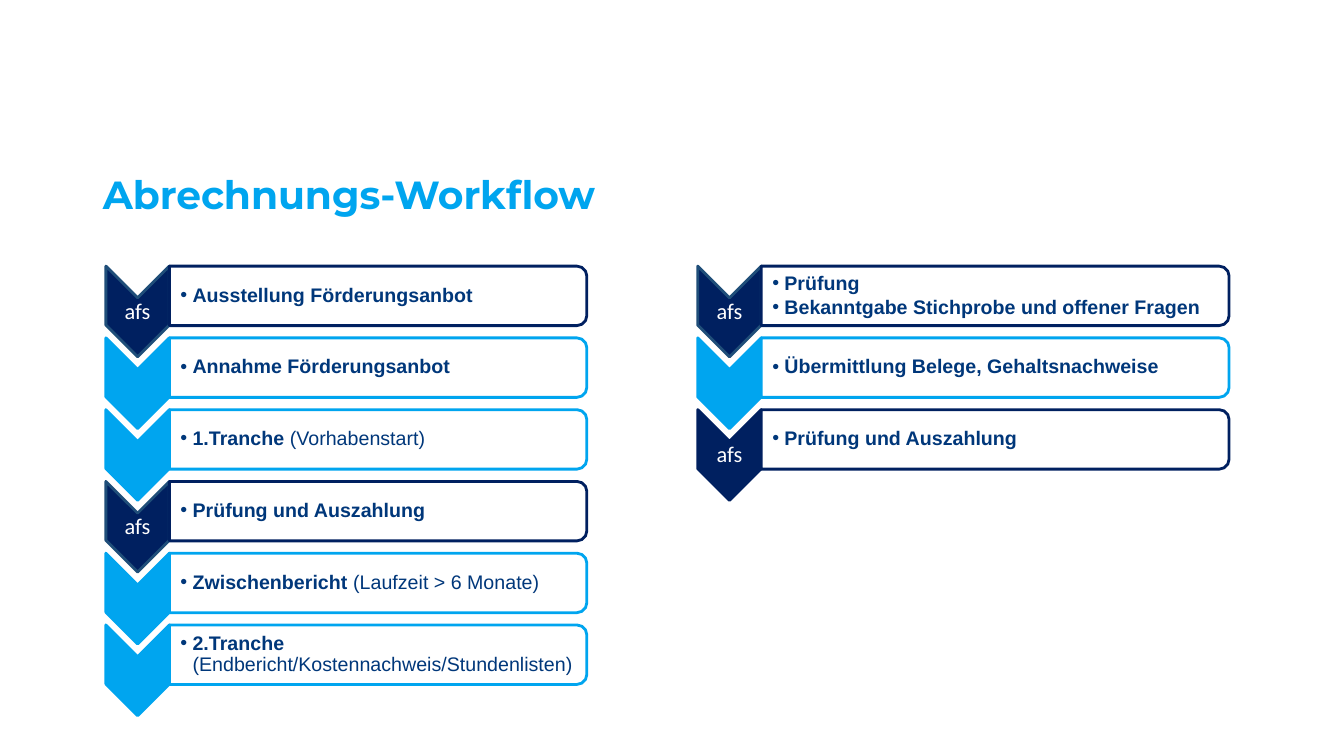
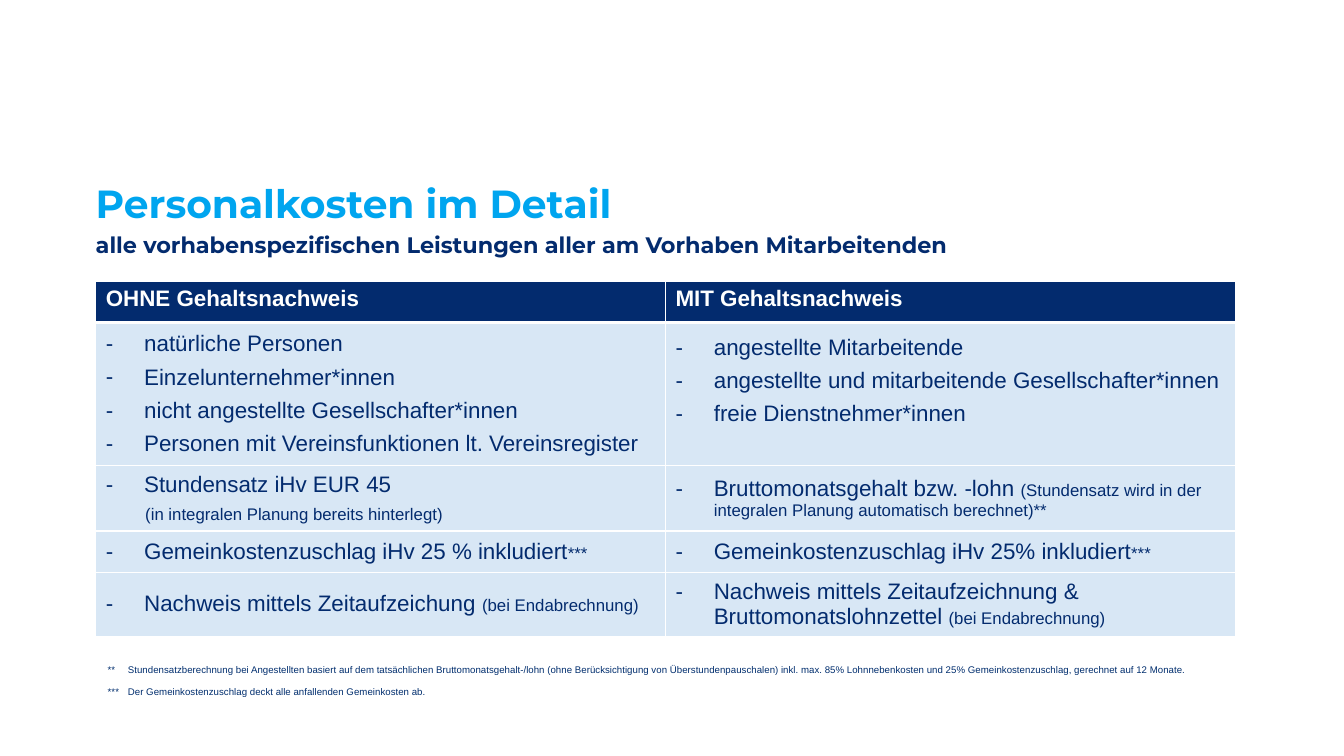
"""Build two slides on grant billing: the workflow and the staff cost details."""
import lxml.etree
import pptx
import pptx.dml.color
import pptx.enum.shapes
import pptx.enum.text
import pptx.oxml.ns
import pptx.util

Inches = pptx.util.Inches
Pt = pptx.util.Pt
RGB = pptx.dml.color.RGBColor.from_string
qn = pptx.oxml.ns.qn
SHAPE = pptx.enum.shapes.MSO_SHAPE
ANCHOR = pptx.enum.text.MSO_ANCHOR
CENTER = pptx.enum.text.PP_ALIGN.CENTER

COLORS = {
    "sky": "00A5EF",
    "midnight": "002060",
    "edge": "1F4E79",
    "step": "00377A",
    "navy": "032B6E",
    "footnote": "002E6E",
    "pale": "D8E7F5",
    "white": "FFFFFF",
}


def add_text_frame(slide, left, top, width, height, margins, anchor=ANCHOR.TOP):
    """Add a wrapping text box and return its text frame."""
    box = slide.shapes.add_textbox(Inches(left), Inches(top), Inches(width), Inches(height))
    frame = box.text_frame
    frame.word_wrap = True
    frame.vertical_anchor = anchor
    frame.margin_left, frame.margin_top, frame.margin_right, frame.margin_bottom = map(Inches, margins)
    return frame


def write(paragraph, runs, color, font="Arial", bullet=None, left=0, first=0):
    """Fill a paragraph with (text, size, bold) runs and set its indent and bullet."""
    properties = paragraph._p.get_or_add_pPr()
    if left:
        properties.set("marL", str(Inches(left)))
        properties.set("indent", str(Inches(first)))
    if bullet:
        lxml.etree.SubElement(properties, qn("a:buFont")).set("typeface", "Arial")
        lxml.etree.SubElement(properties, qn("a:buChar")).set("char", bullet)
    for text, size, bold in runs:
        if text:
            run = paragraph.add_run()
            run.text = text
            run.font.name = font
            run.font.size = Pt(size)
            run.font.bold = bold
            run.font.color.rgb = RGB(COLORS[color])


presentation = pptx.Presentation()
presentation.slide_width = Inches(13.33)
presentation.slide_height = Inches(7.5)
blank = presentation.slide_layouts[6]

titles = [
    (1.02, 1.06, ANCHOR.BOTTOM, "Abrechnungs-Workflow", ""),
    (0.95, 1.78, ANCHOR.TOP, "Personalkosten im Detail",
     "alle vorhabenspezifischen Leistungen aller am Vorhaben Mitarbeitenden"),
]
slides = []
for left, top, anchor, title, subtitle in titles:
    slide = presentation.slides.add_slide(blank)
    slides.append(slide)
    frame = add_text_frame(slide, left, top, 11.54, 1.1, (0, 0, 0, 0), anchor)
    write(frame.paragraphs[0], [(title, 28, True)], "sky", "Montserrat")
    if subtitle:
        paragraph = frame.add_paragraph()
        paragraph.space_before = Pt(3.2)
        write(paragraph, [(subtitle, 16, True)], "navy", "Montserrat")
workflow, costs = slides

AGENCY = ("midnight", "edge", "afs")
APPLICANT = ("sky", "sky", "")
columns = [
    (1.05, 4.14, [
        (AGENCY, [("Ausstellung Förderungsanbot", "")]),
        (APPLICANT, [("Annahme Förderungsanbot", "")]),
        (APPLICANT, [("1.Tranche ", "(Vorhabenstart)")]),
        (AGENCY, [("Prüfung und Auszahlung", "")]),
        (APPLICANT, [("Zwischenbericht ", "(Laufzeit > 6 Monate)")]),
        (APPLICANT, [("2.Tranche ", "(Endbericht/Kostennachweis/Stundenlisten)")]),
    ]),
    (6.92, 4.64, [
        (AGENCY, [("Prüfung", ""), ("Bekanntgabe Stichprobe und offener Fragen", "")]),
        (APPLICANT, [("Übermittlung Belege, Gehaltsnachweise", "")]),
        (("midnight", "midnight", "afs"), [("Prüfung und Auszahlung", "")]),
    ]),
]
first_top, step_pitch = 2.64, 3.56 / 5
arrow_width, arrow_height, bar_height = 0.63, 0.9, 0.59
for column_left, bar_width, steps in columns:
    bar_left = column_left + arrow_width
    for index, ((color, edge, label), lines) in enumerate(steps):
        top = first_top + index * step_pitch
        parts = [
            (SHAPE.CHEVRON, column_left, arrow_width, arrow_height, color, edge),
            (SHAPE.ROUND_2_SAME_RECTANGLE, bar_left, bar_width, bar_height, "white", color),
        ]
        for preset, left, width, height, fill, line in parts:
            shape = workflow.shapes.add_shape(
                preset,
                Inches(left + (width - height) / 2), Inches(top + (height - width) / 2),
                Inches(height), Inches(width))
            shape.rotation = 90
            shape.shadow.inherit = False
            shape.fill.solid()
            shape.fill.fore_color.rgb = RGB(COLORS[fill])
            shape.line.color.rgb = RGB(COLORS[line])
            shape.line.width = Pt(2)
        if label:
            frame = add_text_frame(workflow, column_left, top + 0.32, arrow_width, 0.27,
                                   (0.01, 0.01, 0.01, 0.01), ANCHOR.MIDDLE)
            paragraph = frame.paragraphs[0]
            paragraph.alignment = CENTER
            paragraph.line_spacing = 0.9
            write(paragraph, [(label, 16, False)], "white", "Calibri")
        frame = add_text_frame(workflow, bar_left, top + 0.03, bar_width - 0.02, 0.53,
                               (0.11, 0.01, 0.01, 0.01), ANCHOR.MIDDLE)
        for number, (strong, plain) in enumerate(lines):
            paragraph = frame.add_paragraph() if number else frame.paragraphs[0]
            paragraph.line_spacing = 0.9
            paragraph.space_after = Pt(2)
            write(paragraph, [(strong, 14, True), (plain, 14, False)], "step",
                  bullet="•", left=0.12, first=-0.12)

cost_rows = [
    (0.41, [("OHNE Gehaltsnachweis", "")], [("MIT Gehaltsnachweis", "")]),
    (1.34,
     [("natürliche Personen", ""), ("Einzelunternehmer*innen", ""),
      ("nicht angestellte Gesellschafter*innen", ""),
      ("Personen mit Vereinsfunktionen lt. Vereinsregister", "")],
     [("angestellte Mitarbeitende", ""),
      ("angestellte und mitarbeitende Gesellschafter*innen", ""),
      ("freie Dienstnehmer*innen", "")]),
    (0.61,
     [("Stundensatz iHv EUR 45", ""), ("", "(in integralen Planung bereits hinterlegt)")],
     [("Bruttomonatsgehalt bzw. -lohn ",
       "(Stundensatz wird in der integralen Planung automatisch berechnet)**")]),
    (0.41,
     [("Gemeinkostenzuschlag iHv 25 % inkludiert", "***")],
     [("Gemeinkostenzuschlag iHv 25% inkludiert", "***")]),
    (0.6,
     [("Nachweis mittels Zeitaufzeichung ", "(bei Endabrechnung)")],
     [("Nachweis mittels Zeitaufzeichnung & Bruttomonatslohnzettel ", "(bei Endabrechnung)")]),
]
table = costs.shapes.add_table(
    len(cost_rows), 2, Inches(0.95), Inches(2.79), Inches(11.3),
    Inches(sum(row[0] for row in cost_rows))).table
for column in table.columns:
    column.width = Inches(5.65)
for row_index, (height, *cells) in enumerate(cost_rows):
    table.rows[row_index].height = Inches(height)
    header = row_index == 0
    for column_index, lines in enumerate(cells):
        cell = table.cell(row_index, column_index)
        cell_properties = cell._tc.get_or_add_tcPr()
        for side in "LRTB":
            thick = (row_index, side) in [(0, "B"), (1, "T")]
            border = lxml.etree.SubElement(cell_properties, qn("a:ln" + side))
            border.set("w", str(Pt(3 if thick else 1)))
            border_fill = lxml.etree.SubElement(border, qn("a:solidFill"))
            lxml.etree.SubElement(border_fill, qn("a:srgbClr")).set("val", COLORS["white"])
        cell.fill.solid()
        cell.fill.fore_color.rgb = RGB(COLORS["navy" if header else "pale"])
        cell.vertical_anchor = ANCHOR.TOP if header else ANCHOR.MIDDLE
        for number, (main, small) in enumerate(lines):
            frame = cell.text_frame
            paragraph = frame.add_paragraph() if number else frame.paragraphs[0]
            if number:
                paragraph.space_before = Pt(6)
            runs = [(main, 16, header), (small, 12, False)]
            if header:
                write(paragraph, runs, "white")
            elif main:
                write(paragraph, runs, "navy", bullet="-", left=0.38, first=-0.38)
            else:
                write(paragraph, runs, "navy", left=0.39)
table.cell(1, 1).margin_bottom = Inches(0.31)

footnotes = [
    "**\tStundensatzberechnung bei Angestellten basiert auf dem tatsächlichen "
    "Bruttomonatsgehalt-/lohn (ohne Berücksichtigung von Überstundenpauschalen) inkl. "
    "max. 85% Lohnnebenkosten und 25% Gemeinkostenzuschlag, gerechnet auf 12 Monate.",
    "***\tDer Gemeinkostenzuschlag deckt alle anfallenden Gemeinkosten ab.",
]
frame = add_text_frame(costs, 0.97, 6.42, 11.29, 0.5, (0.1, 0.05, 0.1, 0.05))
for number, footnote in enumerate(footnotes):
    paragraph = frame.add_paragraph() if number else frame.paragraphs[0]
    write(paragraph, [(footnote, 12, False)], "footnote", left=0.2, first=-0.2)
    for run in paragraph.runs:
        run._r.get_or_add_rPr().set("baseline", "-25000")

presentation.save("out.pptx")
